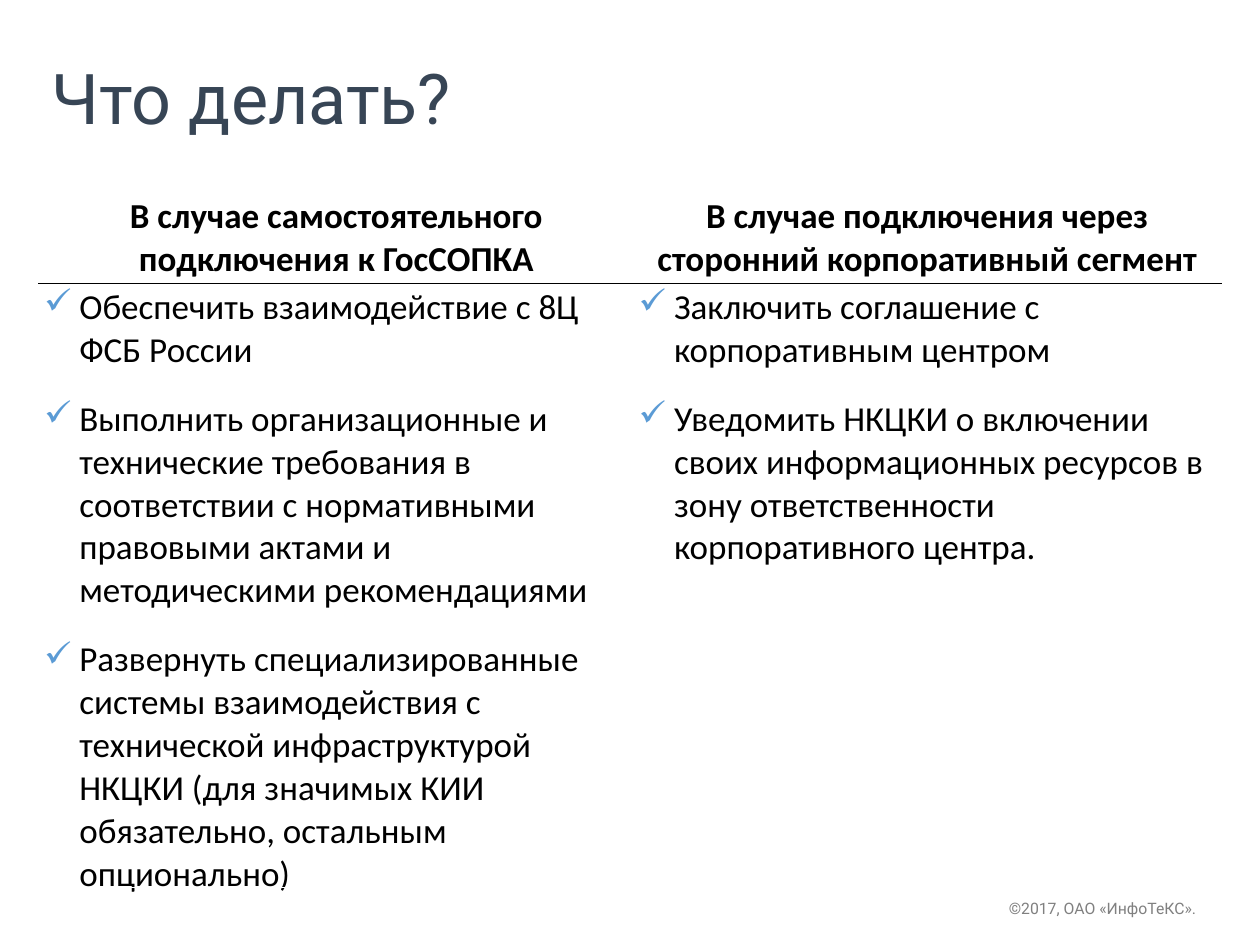
"""Build the "Что делать?" slide with its two-column comparison table."""
from dataclasses import dataclass

from lxml.etree import SubElement
from pptx import Presentation
from pptx.dml.color import RGBColor as RGB
from pptx.enum.text import MSO_ANCHOR as ANCHOR, PP_ALIGN as ALIGN
from pptx.oxml.ns import qn
from pptx.util import Inches, Pt


@dataclass(frozen=True)
class Theme:
    """Colours, fonts and type sizes of the slide."""
    title: str = "374555"
    text: str = "000000"
    muted: str = "808080"
    accent: str = "5B9BD5"
    paper: str = "FFFFFF"
    head_font: str = "Roboto"
    body_font: str = "Calibri"
    title_size: int = 40
    body_size: int = 20
    note_size: int = 9


@dataclass(frozen=True)
class Column:
    """One table column: heading, width in inches and list items."""
    heading: str
    width: float
    items: tuple[str, ...]


THEME = Theme()
ROW_HEIGHTS = (0.72, 4.78)
COLUMNS = (
    Column("В случае самостоятельного подключения к ГосСОПКА", 4.72, (
        "Обеспечить взаимодействие с 8Ц ФСБ России",
        "Выполнить организационные и технические требования в соответствии с "
        "нормативными правовыми актами и методическими рекомендациями",
        "Развернуть специализированные системы взаимодействия с технической "
        "инфраструктурой НКЦКИ (для значимых КИИ обязательно, остальным опционально)",
    )),
    Column("В случае подключения через сторонний корпоративный сегмент", 4.66, (
        "Заключить соглашение с корпоративным центром",
        "Уведомить НКЦКИ о включении своих информационных ресурсов в зону "
        "ответственности корпоративного центра.",
    )),
)


def set_attrs(target, values: dict) -> None:
    """Set each named attribute on the target."""
    for name, value in values.items():
        setattr(target, name, value)


def write(p, text: str, font: str, size: int, color: str, bold: bool = False) -> None:
    """Add one formatted run to a paragraph."""
    r = p.add_run()
    r.text = text
    set_attrs(r.font, {"name": font, "size": Pt(size), "bold": bold})
    r.font.color.rgb = RGB.from_string(color)


def add_check(p) -> None:
    """Give a paragraph a hanging check-mark bullet."""
    pPr = p._p.get_or_add_pPr()
    indent = Inches(0.28)
    pPr.set("marL", str(indent))
    pPr.set("indent", str(-indent))
    SubElement(SubElement(pPr, qn("a:buClr")), qn("a:srgbClr"), val=THEME.accent)
    SubElement(pPr, qn("a:buChar"), char="✓")


def style_cell(cell, top: str, bottom: str) -> None:
    """Set the margins, borders and empty fill of a cell."""
    set_attrs(cell, {"margin_left": Inches(0.04), "margin_right": Inches(0.04),
                     "margin_top": Inches(0.02), "margin_bottom": Inches(0.02)})
    tcPr = cell._tc.get_or_add_tcPr()
    borders = {"lnL": THEME.paper, "lnR": THEME.paper, "lnT": top, "lnB": bottom}
    for tag, color in borders.items():
        ln = SubElement(tcPr, qn(f"a:{tag}"), w=str(Pt(1)))
        SubElement(SubElement(ln, qn("a:solidFill")), qn("a:srgbClr"), val=color)
    cell.fill.background()


def fill_cell(cell, texts: tuple[str, ...], heading: bool) -> None:
    """Write a centred heading or a checked list into a cell."""
    tf = cell.text_frame
    for i, text in enumerate(texts):
        p = tf.add_paragraph() if i else tf.paragraphs[0]
        set_attrs(p, {"space_before": Pt(9 if i else 0), "space_after": Pt(6),
                      "alignment": ALIGN.CENTER if heading else ALIGN.LEFT})
        if not heading:
            add_check(p)
        write(p, text, THEME.body_font, THEME.body_size, THEME.text, heading)


def add_comparison(s, columns: tuple[Column, ...]) -> None:
    """Draw the comparison table."""
    width = sum(c.width for c in columns)
    table = s.shapes.add_table(2, len(columns), Inches(0.31), Inches(1.53),
                               Inches(width), Inches(sum(ROW_HEIGHTS))).table
    set_attrs(table, {"first_row": False, "horz_banding": False})
    for row, height in zip(table.rows, ROW_HEIGHTS):
        row.height = Inches(height)
    for i, column in enumerate(columns):
        table.columns[i].width = Inches(column.width)
        head, body = table.cell(0, i), table.cell(1, i)
        style_cell(head, THEME.paper, THEME.text)
        style_cell(body, THEME.text, THEME.paper)
        fill_cell(head, (column.heading,), True)
        fill_cell(body, column.items, False)


def add_title(s, text: str) -> None:
    """Place and format the title placeholder."""
    sp = s.shapes.title
    set_attrs(sp, {"left": Inches(0.31), "top": Inches(0.08),
                   "width": Inches(8.62), "height": Inches(1.45)})
    sp.text_frame.vertical_anchor = ANCHOR.MIDDLE
    p = sp.text_frame.paragraphs[0]
    set_attrs(p, {"alignment": ALIGN.LEFT, "line_spacing": 0.9})
    write(p, text, THEME.head_font, THEME.title_size, THEME.title)


def add_copyright(s, text: str) -> None:
    """Draw the right-aligned copyright line."""
    sp = s.shapes.add_textbox(Inches(7.42), Inches(7.08), Inches(2.17), Inches(0.22))
    sp.text_frame.word_wrap = True
    p = sp.text_frame.paragraphs[0]
    p.alignment = ALIGN.RIGHT
    write(p, text, THEME.head_font, THEME.note_size, THEME.muted)


def main() -> None:
    """Build and save the presentation."""
    prs = Presentation()
    set_attrs(prs, {"slide_width": Inches(10), "slide_height": Inches(7.5)})
    s = prs.slides.add_slide(prs.slide_layouts[5])
    add_copyright(s, "©2017, ОАО «ИнфоТеКС».")
    add_title(s, "Что делать?")
    add_comparison(s, COLUMNS)
    prs.save("out.pptx")


if __name__ == "__main__":
    main()
